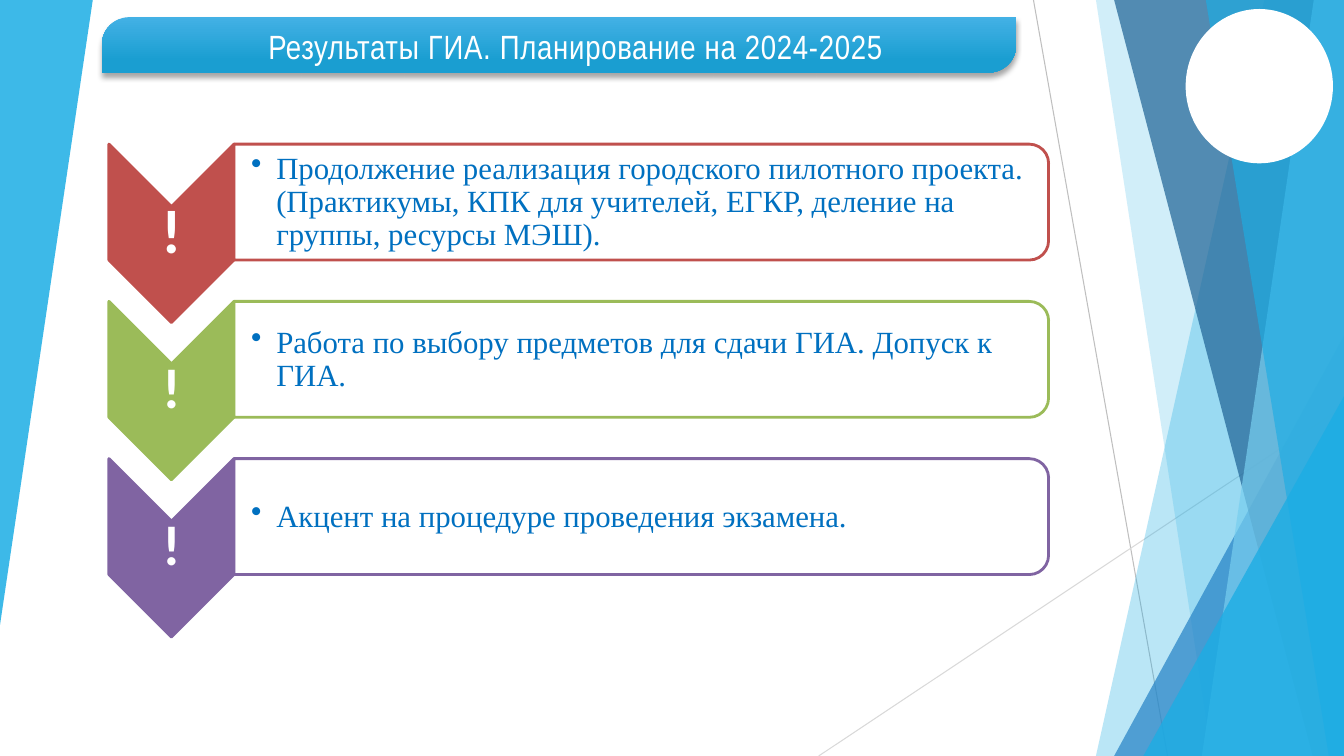
from lxml import etree
from pptx import Presentation
from pptx.dml.color import RGBColor
from pptx.enum.shapes import MSO_CONNECTOR as Link, MSO_SHAPE as Shape
from pptx.enum.text import MSO_ANCHOR as Anchor, MSO_AUTO_SIZE as AutoSize, PP_ALIGN as Align
from pptx.oxml.ns import qn
from pptx.util import Inches, Pt

WIDTH, HEIGHT = 13.33, 7.5
BLUE, WHITE = "1CADE4", "FFFFFF"
TITLE = "Результаты ГИА. Планирование на 2024-2025"
# Colour, size of the mark, text
ROWS = [
    ("C0504D", 44, "Продолжение реализация городского пилотного проекта. "
                   "(Практикумы, КПК для учителей, ЕГКР, деление на группы, ресурсы МЭШ)."),
    ("9BBB59", 40, "Работа по выбору предметов для сдачи ГИА. Допуск к ГИА."),
    ("8064A2", 40, "Акцент на процедуре проведения экзамена."),
]


def color(value):
    return RGBColor.from_string(value)


def child(parent, tag, **attributes):
    element = etree.SubElement(parent, qn(tag))
    for name, value in attributes.items():
        element.set(name, str(value))
    return element


def paint(shape, fill, opacity=100, line=None, weight=2):
    shape.shadow.inherit = False
    shape.fill.solid()
    shape.fill.fore_color.rgb = color(fill)
    if opacity < 100:
        tint = shape.fill._xPr.find(qn("a:solidFill"))[0]
        child(tint, "a:alpha", val=opacity * 1000)
    if line:
        shape.line.color.rgb = color(line)
        shape.line.width = Pt(weight)
    else:
        shape.line.fill.background()


def add_shape(slide, kind, box, adjust=(), turn=0):
    """Place a preset shape so that it covers the box after its turn."""
    left, top, width, height = box
    if turn == 90:
        left, top = left + (width - height) / 2, top + (height - width) / 2
        width, height = height, width
    shape = slide.shapes.add_shape(kind, *map(Inches, (left, top, width, height)))
    shape.rotation = turn
    for index, value in enumerate(adjust):
        shape.adjustments[index] = value
    return shape


def write(shape, text, size, font, ink, bold=False, align=Align.LEFT, anchor=Anchor.MIDDLE,
          insets=(0.1, 0.05, 0.1, 0.05), leading=1.0, bullet=False, tracking=0):
    frame = shape.text_frame
    frame.word_wrap = True
    frame.auto_size = AutoSize.NONE
    frame.vertical_anchor = anchor
    (frame.margin_left, frame.margin_top,
     frame.margin_right, frame.margin_bottom) = map(Inches, insets)
    para = frame.paragraphs[0]
    para.alignment = align
    para.line_spacing = leading
    if bullet:
        settings = para._p.get_or_add_pPr()
        settings.set("marL", str(Inches(0.25)))
        settings.set("indent", str(-Inches(0.25)))
        child(settings, "a:buChar", char="•")
    span = para.add_run()
    span.text = text
    span.font.size, span.font.name, span.font.bold = Pt(size), font, bold
    span.font.color.rgb = color(ink)
    if tracking:
        span.font._element.set("spc", str(int(tracking * 100)))


def add_text(slide, box, text, **options):
    write(slide.shapes.add_textbox(*map(Inches, box)), text, **options)


def draw_backdrop(slide, box):
    left, top, width, height = box
    right, bottom = left + width, top + height

    # Thin lines
    for start, end, tone in [((10.25, top), (11.58, bottom), "BFBFBF"),
                             ((right, 4.03), (8.12, bottom), "D9D9D9")]:
        line = slide.shapes.add_connector(Link.STRAIGHT, *map(Inches, start + end))
        line.line.color.rgb = color(tone)
        line.line.width = Pt(0.75)
        child(line._element.spPr, "a:effectLst")

    def add_band(top_left, bottom_left, bottom_right, fill, opacity):
        corners = [(top_left, top), (right, top), (bottom_right, bottom), (bottom_left, bottom)]
        points = [(Inches(x), Inches(y)) for x, y in corners]
        builder = slide.shapes.build_freeform(*points[0])
        builder.add_line_segments(points[1:], close=True)
        paint(builder.convert_to_shape(), fill, opacity)

    def add_corner(x, y, fill, opacity):
        wedge = add_shape(slide, Shape.ISOSCELES_TRIANGLE, (x, y, right - x, bottom - y), [1])
        paint(wedge, fill, opacity)

    # Overlapping bands and wedges on the right
    add_band(12.54, 10.87, right, BLUE, 30)
    add_band(10.87, 12.02, right, BLUE, 20)
    add_corner(11.05, 3.33, "2683C6", 72)
    add_band(11.05, 13.02, right, "1D6294", 70)
    add_band(13.03, 11.92, right, "77CEEF", 70)
    add_band(11.96, 13.18, right, BLUE, 65)
    add_corner(11.34, 3.93, BLUE, 80)

    # Wedge on the left and white disc
    wedge = add_shape(slide, Shape.ISOSCELES_TRIANGLE, (left, top, 0.92, 6.2), [1], turn=180)
    paint(wedge, BLUE, 85)
    disc = add_shape(slide, Shape.OVAL, (11.77, 0.1, 1.44, 1.51))
    paint(disc, WHITE, line=WHITE, weight=1.5)


def draw_title(slide, box):
    left, top, width, height = box

    # Banner with gradient and shadow
    banner = add_shape(slide, Shape.ROUND_2_DIAG_RECTANGLE, box, [0.5, 0])
    paint(banner, BLUE)
    banner.fill.gradient()
    banner.fill.gradient_angle = 270
    stops = banner.fill.gradient_stops
    for stop, (position, tone) in zip(stops, [(0, "43B1E5"), (0.78, "1A9ED1")]):
        stop.position = position
        stop.color.rgb = color(tone)
    effects = banner._element.spPr.find(qn("a:effectLst"))
    shadow = child(effects, "a:outerShdw", blurRad=Pt(4), dist=Pt(3), dir=90 * 60000, rotWithShape=0)
    child(child(shadow, "a:srgbClr", val="000000"), "a:alpha", val=35000)

    # Title in front of the banner
    title = slide.shapes.title
    title.left, title.top, title.width, title.height = map(
        Inches, (left + 0.49, top + 0.04, width - 0.65, 0.5))
    write(title, TITLE, size=24, font="Arial Narrow", ink=WHITE,
          align=Align.CENTER, anchor=Anchor.TOP, tracking=0.5)
    slide.shapes._spTree.append(title._element)


def draw_row(slide, box, tone, mark_size, text):
    left, top, width, height = box
    arrow_width, arrow_height = 1.24, 1.77

    # Arrow with its mark
    arrow = add_shape(slide, Shape.CHEVRON, (left, top, arrow_width, arrow_height), turn=90)
    paint(arrow, tone, line=tone)
    add_text(slide, (left, top + arrow_width / 2, arrow_width, 0.53), "!", size=mark_size,
             font="Calibri", ink=WHITE, bold=True, align=Align.CENTER,
             insets=(0.03,) * 4, leading=0.9)

    # Panel with its text
    panel_left, panel_width = left + arrow_width, width - arrow_width
    panel = add_shape(slide, Shape.ROUND_2_SAME_RECTANGLE,
                      (panel_left, top, panel_width, height), turn=90)
    paint(panel, WHITE, 90, line=tone)
    add_text(slide, (panel_left, top + 0.06, panel_width - 0.06, height - 0.11), text, size=22,
             font="Times New Roman", ink="0070C0", insets=(0.17, 0.02, 0.02, 0.02),
             leading=0.9, bullet=True)


def main():
    deck = Presentation()
    deck.slide_width, deck.slide_height = Inches(WIDTH), Inches(HEIGHT)
    slide = deck.slides.add_slide(deck.slide_layouts[5])
    draw_backdrop(slide, (0, 0, WIDTH, HEIGHT))
    draw_title(slide, (1.01, 0.17, 9.07, 0.55))
    for index, row in enumerate(ROWS):
        draw_row(slide, (1.08, 1.43 + index * 1.56, 9.32, 1.15), *row)
    deck.save("out.pptx")


if __name__ == "__main__":
    main()
